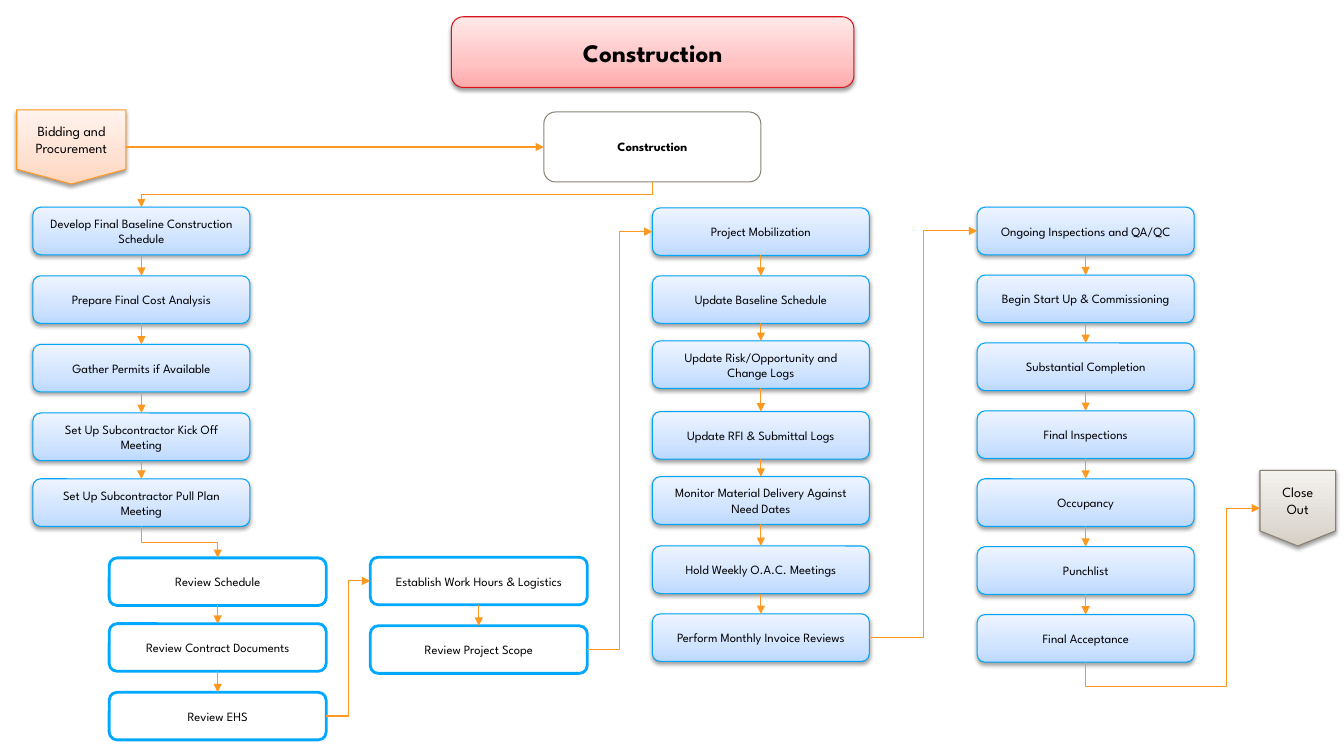
import copy
import itertools

import lxml.etree
import pptx
import pptx.dml.color
import pptx.enum.shapes
import pptx.enum.text
import pptx.oxml.ns
import pptx.util

Pt = pptx.util.Pt
qn = pptx.oxml.ns.qn
SHAPE = pptx.enum.shapes.MSO_SHAPE
CONNECTOR = pptx.enum.shapes.MSO_CONNECTOR
TOP, LEFT, BOTTOM, RIGHT = range(4)

RED = ["FFAAAB", "FFC3C4", "FFE8E8"]
BLUE = ["BDD9FF", "D1E4FF", "EEF4FF"]
ORANGE = ["FFD5BE", "FFE1D1", "FFF3EE"]
GREY = ["D5CFC4", "E1DCD6", "F4F2EF"]


def color(value):
    return pptx.dml.color.RGBColor.from_string(value)


def add_text(shape, text, size=9, bold=False, font="League Spartan", ink="000000"):
    frame = shape.text_frame
    frame.word_wrap = True
    frame.vertical_anchor = pptx.enum.text.MSO_ANCHOR.MIDDLE
    para = frame.paragraphs[0]
    para.alignment = pptx.enum.text.PP_ALIGN.CENTER
    span = para.add_run()
    span.text = text
    span.font.size = Pt(size)
    span.font.bold = bold
    span.font.name = font
    span.font.color.rgb = color(ink)


class FlowChart:
    arrow_color = "FF9820"
    line_width = 0.75
    step_size = (155, 34)
    stop_positions = (0, 0.35, 1)

    def __init__(self, page):
        self.page = page

    def box(self, text, left, top, width, height, line, fill=None,
            line_width=line_width, kind=SHAPE.ROUNDED_RECTANGLE, **text_format):
        """Fill is None, one colour, or three gradient colours from bottom to top."""
        box = self.page.shapes.add_shape(kind, Pt(left), Pt(top), Pt(width), Pt(height))
        box.shadow.inherit = False
        if fill is None:
            box.fill.background()
        elif isinstance(fill, str):
            box.fill.solid()
            box.fill.fore_color.rgb = color(fill)
        else:
            self.gradient(box, fill)
            self.shadow(box)
        box.line.color.rgb = color(line)
        box.line.width = Pt(line_width)
        add_text(box, text, **text_format)
        return box

    def gradient(self, box, fill):
        box.fill.gradient()
        box.fill.gradient_angle = 90
        stop_list = box._element.spPr.find(".//" + qn("a:gsLst"))
        stop_list.append(copy.deepcopy(stop_list[-1]))
        for stop, value, position in zip(box.fill.gradient_stops, fill, self.stop_positions):
            stop.color.rgb = color(value)
            stop.position = position

    def shadow(self, box):
        effects = box._element.spPr.find(qn("a:effectLst"))
        outer = lxml.etree.SubElement(
            effects, qn("a:outerShdw"), blurRad=str(Pt(3.1)), dist=str(Pt(1.6)),
            dir="5400000", rotWithShape="0")
        black = lxml.etree.SubElement(outer, qn("a:srgbClr"), val="000000")
        lxml.etree.SubElement(black, qn("a:alpha"), val="38000")

    def arrow(self, start, start_side, end, end_side, kind=CONNECTOR.STRAIGHT):
        arrow = self.page.shapes.add_connector(kind, 0, 0, 0, 0)
        arrow.begin_connect(start, start_side)
        arrow.end_connect(end, end_side)
        arrow.line.color.rgb = color(self.arrow_color)
        arrow.line.width = Pt(self.line_width)
        properties = arrow._element.spPr
        lxml.etree.SubElement(properties.find(qn("a:ln")), qn("a:tailEnd"), type="triangle")
        lxml.etree.SubElement(properties, qn("a:effectLst"))
        return arrow

    def side_elbow(self, start, end):
        self.arrow(start, RIGHT, end, LEFT, CONNECTOR.ELBOW)

    def down_elbow(self, start, end, end_side=TOP, preset="bentConnector3", bends=(0.5,)):
        """Elbow that leaves downwards: the frame is turned by 90 degrees."""
        arrow = self.arrow(start, BOTTOM, end, end_side, CONNECTOR.ELBOW)
        goes_right = arrow.end_x > arrow.begin_x
        goes_up = arrow.end_y < arrow.begin_y
        left, top, width, height = arrow.left, arrow.top, arrow.width, arrow.height
        arrow.left = left + (width - height) // 2
        arrow.top = top + (height - width) // 2
        arrow.width, arrow.height = height, width
        frame = arrow._element.spPr.find(qn("a:xfrm"))
        frame.set("rot", "5400000")
        frame.set("flipH", str(int(goes_up)))
        frame.set("flipV", str(int(goes_right)))
        geometry = arrow._element.spPr.find(qn("a:prstGeom"))
        geometry.set("prst", preset)
        guides = geometry.find(qn("a:avLst"))
        for number, bend in enumerate(bends, 1):
            lxml.etree.SubElement(guides, qn("a:gd"), name=f"adj{number}",
                                  fmla=f"val {round(bend * 100000)}")

    def column(self, left, steps, **style):
        """Boxes under one another, each with an arrow to the next."""
        boxes = [self.box(text, left, top, *self.step_size, **style) for top, text in steps]
        for upper, lower in itertools.pairwise(boxes):
            self.arrow(upper, BOTTOM, lower, TOP)
        return boxes


def main():
    deck = pptx.Presentation()
    deck.slide_width, deck.slide_height = Pt(960), Pt(540)
    chart = FlowChart(deck.slides.add_slide(deck.slide_layouts[6]))

    chart.box("Construction", 322.5, 12, 287.5, 50.5, "D7141E", RED, size=18, bold=True)
    construction = chart.box("Construction", 388.5, 80, 155, 50, "8B8376", bold=True)
    bidding = chart.box("Bidding and Procurement", 12, 78.5, 78, 53, "FF9820", ORANGE,
                        kind=SHAPE.FLOWCHART_OFFPAGE_CONNECTOR, size=10)
    close_out = chart.box("Close Out", 900, 336, 54, 54, "888073", GREY,
                          kind=SHAPE.FLOWCHART_OFFPAGE_CONNECTOR, size=10)

    main_step = dict(line="00A4F9", fill=BLUE)
    review_step = dict(line="00A8FF", fill="FFFFFF", line_width=2)
    planning = chart.column(23.5, [
        (148, "Develop Final Baseline Construction Schedule"),
        (197, "Prepare Final Cost Analysis"),
        (246, "Gather Permits if Available"),
        (295, "Set Up Subcontractor Kick Off Meeting"),
        (342, "Set Up Subcontractor Pull Plan Meeting"),
    ], **main_step)
    reviews = chart.column(78, [
        (398.5, "Review Schedule"),
        (445.5, "Review Contract Documents"),
        (494.5, "Review EHS"),
    ], **review_step)
    scope = chart.column(264.5, [
        (398, "Establish Work Hours & Logistics"),
        (447, "Review Project Scope"),
    ], **review_step)
    execution = chart.column(466, [
        (148.5, "Project Mobilization"),
        (197, "Update Baseline Schedule"),
        (243.5, "Update Risk/Opportunity and Change Logs"),
        (294, "Update RFI & Submittal Logs"),
        (340.5, "Monitor Material Delivery Against Need Dates"),
        (390, "Hold Weekly O.A.C. Meetings"),
        (438.5, "Perform Monthly Invoice Reviews"),
    ], **main_step)
    completion_steps = [
        "Ongoing Inspections and QA/QC", "Begin Start Up & Commissioning",
        "Substantial Completion", "Final Inspections", "Occupancy", "Punchlist",
        "Final Acceptance",
    ]
    completion = chart.column(698, [
        (148 + 48.5 * row, text) for row, text in enumerate(completion_steps)
    ], **main_step)

    chart.arrow(bidding, RIGHT, construction, LEFT)
    chart.down_elbow(construction, planning[0])
    chart.down_elbow(planning[-1], reviews[0])
    chart.side_elbow(reviews[-1], scope[0])
    chart.side_elbow(scope[-1], execution[0])
    chart.side_elbow(execution[-1], completion[0])
    chart.down_elbow(completion[-1], close_out, LEFT, "bentConnector4", (-0.16, 0.81))

    deck.save("out.pptx")


if __name__ == "__main__":
    main()
